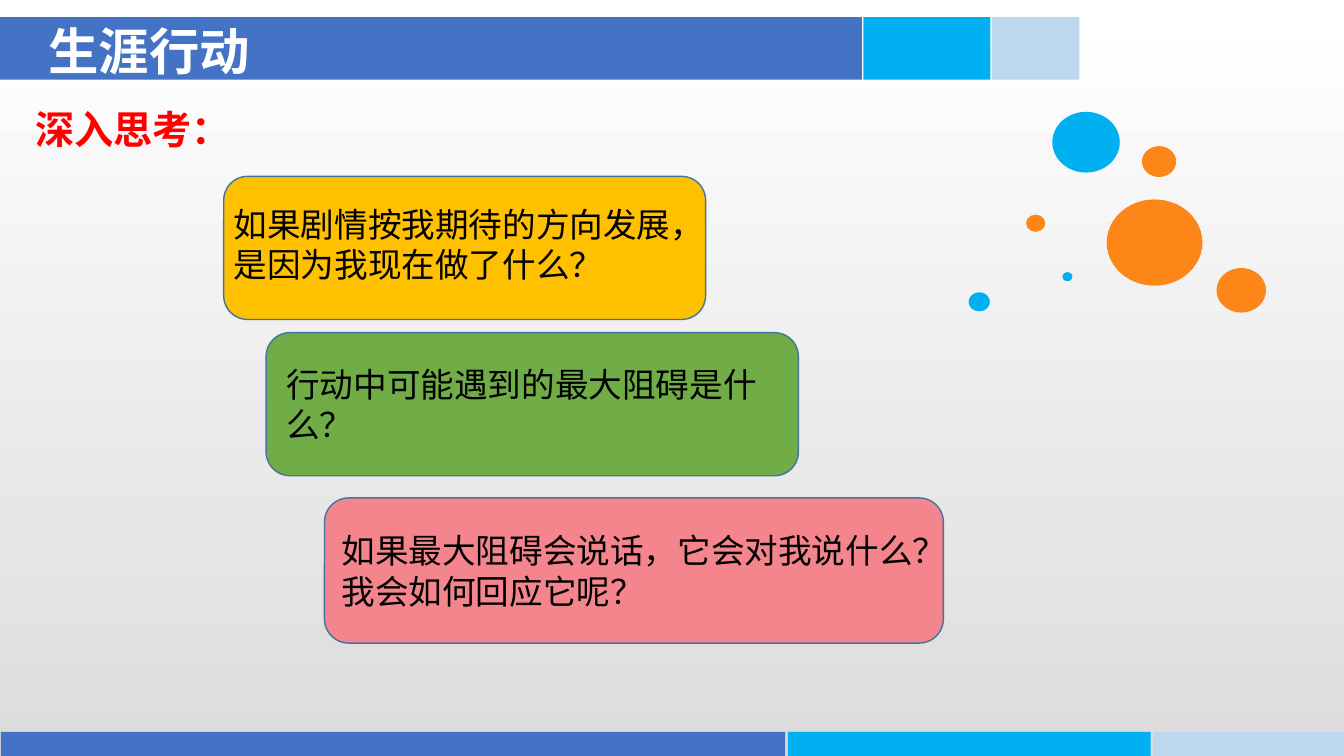
import pptx
import pptx.util
import pptx.dml.color
import pptx.enum.shapes
import pptx.enum.text
import pptx.oxml
import pptx.oxml.ns
from lxml import etree

Pt = pptx.util.Pt
SHAPE = pptx.enum.shapes.MSO_SHAPE
ALIGN = pptx.enum.text.PP_ALIGN
ANCHOR = pptx.enum.text.MSO_ANCHOR
AUTO = pptx.enum.text.MSO_AUTO_SIZE

COLORS = {
    "blue": "4472C4", "cyan": "00B0F0", "pale": "BDD7EE", "orange": "FC8618",
    "amber": "FFC000", "green": "70AD47", "pink": "F4858D", "outline": "43739E",
    "white": "FFFFFF", "grey": "DCDCDC", "black": "000000", "red": "FF0000",
}
CJK_FONT = "Noto Sans CJK SC"


def rgb(name):
    return pptx.dml.color.RGBColor.from_string(COLORS[name])


def place(sp, box):
    sp.left, sp.top, sp.width, sp.height = (Pt(v) for v in box)


def write(sp, text, size=24, font="Arial", color="black", bold=False,
          anchor=ANCHOR.MIDDLE, insets=(7.2, 3.6, 7.2, 3.6)):
    tf = sp.text_frame
    tf.word_wrap = True
    tf.auto_size = AUTO.NONE
    tf.vertical_anchor = anchor
    tf.margin_left, tf.margin_top, tf.margin_right, tf.margin_bottom = (
        Pt(v) for v in insets)
    p = tf.paragraphs[0]
    p.alignment = ALIGN.LEFT
    r = p.add_run()
    r.text = text
    r.font.size, r.font.name, r.font.bold = Pt(size), font, bold
    r.font.color.rgb = rgb(color)
    ea = etree.SubElement(r.font._element, pptx.oxml.ns.qn("a:ea"))
    ea.set("typeface", CJK_FONT)


def add_filled(slide, kind, box, fill, line=None):
    sp = slide.shapes.add_shape(kind, *(Pt(v) for v in box))
    sp.shadow.inherit = False
    sp.fill.solid()
    sp.fill.fore_color.rgb = rgb(fill)
    if line:
        sp.line.color.rgb = rgb(line)
        sp.line.width = Pt(1)
    else:
        sp.line.fill.background()
    return sp


def paint_background(slide):
    fill = slide.background.fill
    fill.gradient()
    fill.gradient_angle = 270
    for stop, color in zip(fill.gradient_stops, ("white", "grey")):
        stop.color.rgb = rgb(color)


def add_band(slide, left, top, height, widths, gap):
    """Lay three coloured bars in a row from the left edge."""
    for width, color in zip(widths, ("blue", "cyan", "pale")):
        add_filled(slide, SHAPE.RECTANGLE, (left, top, width, height), color)
        left += width + gap


def add_bubbles(slide, left, top):
    bubbles = [
        (0, 128.9, 15.1, "cyan"), (98.6, 62.6, 68.4, "orange"),
        (59.8, 0, 48.2, "cyan"), (177.1, 111.6, 35.3, "orange"),
        (123.8, 24.5, 24.5, "orange"), (41, 73.4, 13.7, "orange"),
        (67, 114.5, 7.2, "cyan"),
    ]
    for x, y, width, color in bubbles:
        add_filled(slide, SHAPE.OVAL, (left + x, top + y, width, width * 0.9), color)


def add_heading(slide, box, text):
    title = slide.shapes.title
    place(title, box)
    write(title, text, size=36, font=CJK_FONT, color="white", bold=True)
    # Bring the title in front of the band
    title.element.getparent().append(title.element)


def add_subheading(slide, box, text):
    sp = slide.shapes.add_textbox(*(Pt(v) for v in box))
    write(sp, text, size=28, color="red", bold=True, anchor=ANCHOR.TOP)


def add_question(slide, box, fill, text, insets):
    sp = add_filled(slide, SHAPE.ROUNDED_RECTANGLE, box, fill, "outline")
    write(sp, text, insets=insets)


def main():
    prs = pptx.Presentation()
    prs.slide_width, prs.slide_height = Pt(960), Pt(540)
    slide = prs.slides.add_slide(prs.slide_layouts[5])

    paint_background(slide)
    add_band(slide, 0, 12.24, 44.64, (615.6, 90.7, 62.6), 1.1)
    add_band(slide, 0.72, 522.7, 17.3, (560.2, 259.2, 136.1), 1.9)
    add_bubbles(slide, 691.9, 79.9)
    add_heading(slide, (27.4, 17.3, 279.4, 36.7), "生涯行动")

    questions = [
        ((159.8, 126, 344.2, 102.2), "amber",
         "如果剧情按我期待的方向发展，是因为我现在做了什么？", (2.2, 3.6, 2.2, 8.6)),
        ((190.1, 237.6, 380.2, 102.2), "green",
         "行动中可能遇到的最大阻碍是什么？", (9.4, 3.6, 2.9, 3.6)),
        ((231.8, 355.7, 442.1, 103.7), "pink",
         "如果最大阻碍会说话，它会对我说什么？我会如何回应它呢？", (7.2, 3.6, 7.2, 3.6)),
    ]
    for question in questions:
        add_question(slide, *question)
    add_subheading(slide, (18, 72, 213.8, 41), "深入思考：")

    prs.save("out.pptx")


if __name__ == "__main__":
    main()
